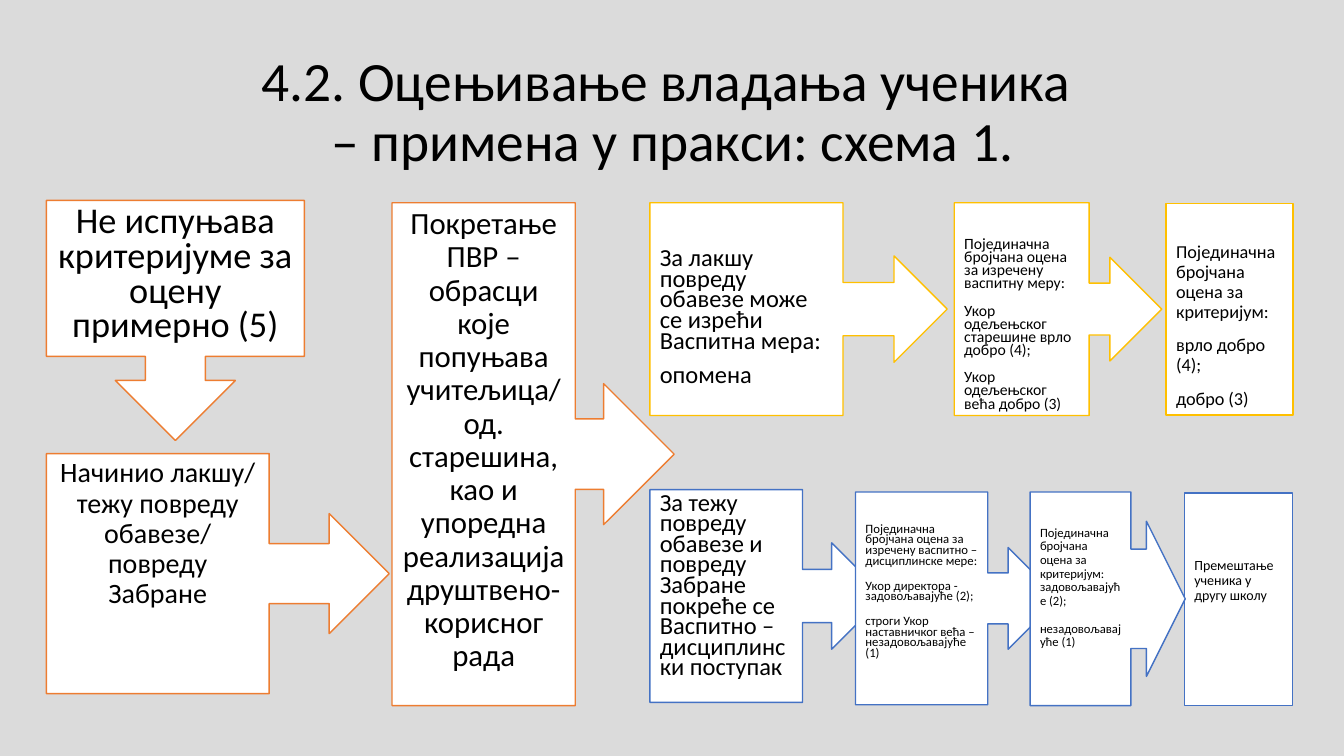
from pptx import Presentation
from pptx.dml.color import RGBColor
from pptx.enum import shapes, text
from pptx.util import Cm, Pt

COLORS = {
    "background": "DBDBDB",
    "box": "FFFFFF",
    "text": "000000",
    "procedure": "ED7D31",
    "minor": "FFC000",
    "major": "4472C4",
}
FONT = "Calibri"
RIGHT = shapes.MSO_SHAPE.RIGHT_ARROW_CALLOUT
DOWN = shapes.MSO_SHAPE.DOWN_ARROW_CALLOUT
PLAIN = shapes.MSO_SHAPE.RECTANGLE
LEFT_ALIGNED = text.PP_ALIGN.LEFT
CENTERED = text.PP_ALIGN.CENTER
TOP_INSET = 0.13


def color(name):
    return RGBColor.from_string(COLORS[name])


def write(frame, content, size, align, spacing, before=0):
    """Fill a text frame and format all of its paragraphs alike."""
    frame.word_wrap = True
    frame.text = content
    for paragraph in frame.paragraphs:
        paragraph.alignment = align
        paragraph.line_spacing = spacing
        paragraph.space_before = Pt(before)
        for run in paragraph.runs:
            run.font.size = Pt(size)
            run.font.name = FONT
            run.font.color.rgb = color("text")


def add_title(slide, content):
    title = slide.shapes.title
    title.left, title.top = Cm(2.34), Cm(1.02)
    title.width, title.height = Cm(29.21), Cm(3.68)
    title.text_frame.vertical_anchor = text.MSO_ANCHOR.MIDDLE
    write(title.text_frame, content, 39.6, CENTERED, 0.9)


def add_step(slide, kind, place, branch, content, size, spacing,
             align=LEFT_ALIGNED, inset=TOP_INSET, adjustments=()):
    """Draw one step of the scheme; place is left, top, width, height in cm."""
    step = slide.shapes.add_shape(kind, *(Cm(length) for length in place))
    for index, value in enumerate(adjustments):
        step.adjustments[index] = value
    step.shadow.inherit = False
    step.fill.solid()
    step.fill.fore_color.rgb = color("box")
    step.line.color.rgb = color(branch)
    step.line.width = Pt(1)
    step.text_frame.vertical_anchor = text.MSO_ANCHOR.TOP
    step.text_frame.margin_top = Cm(inset)
    write(step.text_frame, content, size, align, spacing, before=10)


def add_procedure(slide):
    add_step(slide, RIGHT, (9.88, 5.11, 7.11, 12.67), "procedure",
             "Покретање ПВР – обрасци које попуњава учитељица/ од. старешина, "
             "као и упоредна реализација друштвено- корисног рада",
             22, 0.9, CENTERED)
    add_step(slide, RIGHT, (1.17, 11.43, 8.64, 6.05), "procedure",
             "Начинио лакшу/ тежу повреду обавезе/ повреду Забране",
             20, 0.9, CENTERED)
    add_step(slide, DOWN, (1.17, 5.05, 6.5, 6.05), "procedure",
             "Не испуњава критеријуме за оцену примерно (5)",
             25.9, 0.8, CENTERED)


def add_minor_branch(slide):
    add_step(slide, RIGHT, (16.38, 5.11, 7.49, 5.36), "minor",
             "За лакшу повреду обавезе може се изрећи Васпитна мера:\n"
             "опомена",
             17.5, 0.7, inset=1.2)
    add_step(slide, RIGHT, (24.05, 5.11, 5.23, 5.36), "minor",
             "Појединачна бројчана оцена за изречену васпитну меру:\n"
             "Укор одељењског старешине врло добро (4);\n"
             "Укор одељењског већа добро (3)",
             11.2, 0.7, inset=0.91)
    add_step(slide, PLAIN, (29.39, 5.13, 3.2, 5.33), "minor",
             "Појединачна бројчана оцена за критеријум:\n"
             "врло добро (4);\n"
             "добро (3)",
             13, 0.9, inset=1)


def add_major_branch(slide):
    add_step(slide, RIGHT, (16.38, 12.34, 5.92, 5.36), "major",
             "За тежу повреду обавезе и повреду Забране покреће се "
             "Васпитно – дисциплински поступак",
             17.5, 0.7)
    add_step(slide, RIGHT, (21.56, 12.4, 5.13, 5.36), "major",
             "Појединачна бројчана оцена за изречену васпитно – "
             "дисциплинске мере:\n"
             "Укор директора - задовољавајуће (2);\n"
             "строги Укор наставничког већа – незадовољавајуће (1)",
             9.1, 0.7, inset=0.82)
    add_step(slide, PLAIN, (29.85, 12.42, 2.72, 5.36), "major",
             "Премештање ученика у другу школу",
             10, 0.9, inset=1.64)
    add_step(slide, RIGHT, (25.96, 12.4, 3.91, 5.38), "major",
             "Појединачна бројчана оцена за критеријум: задовољавајуће (2);\n"
             "незадовољавајуће (1)",
             9, 0.9, inset=0.86, adjustments=(0.64, 0.5, 0.25, 0.65))


def main():
    presentation = Presentation()
    presentation.slide_width = Cm(33.87)
    presentation.slide_height = Cm(19.05)

    # Title-only slide with a grey background
    slide = presentation.slides.add_slide(presentation.slide_layouts[5])
    slide.background.fill.solid()
    slide.background.fill.fore_color.rgb = color("background")
    add_title(slide, "4.2. Оцењивање владања ученика \v"
                     "– примена у пракси: схема 1.")

    # Common procedure, then the branches for minor and major breaches
    add_procedure(slide)
    add_minor_branch(slide)
    add_major_branch(slide)

    presentation.save("out.pptx")


if __name__ == "__main__":
    main()
